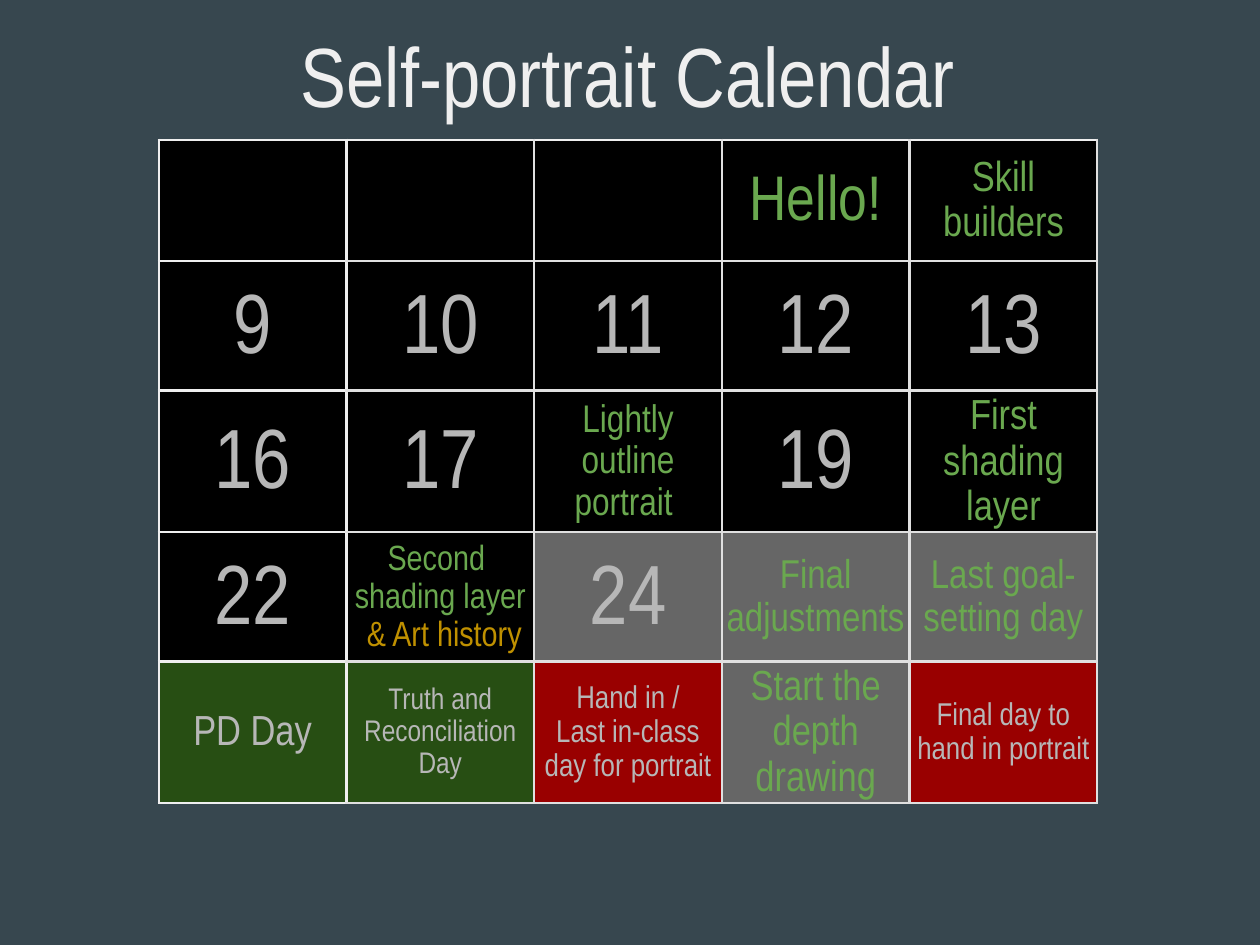
from dataclasses import dataclass

from lxml import etree
from pptx import Presentation
from pptx.dml.color import RGBColor
from pptx.enum.text import MSO_ANCHOR, PP_ALIGN
from pptx.oxml.ns import qn
from pptx.util import Inches, Pt

SLATE = RGBColor(0x37, 0x47, 0x4F)
BLACK = RGBColor(0x00, 0x00, 0x00)
GRAY = RGBColor(0x66, 0x66, 0x66)
DARK_GREEN = RGBColor(0x27, 0x4E, 0x13)
RED = RGBColor(0x99, 0x00, 0x00)
GREEN = RGBColor(0x6A, 0xA8, 0x4F)
AMBER = RGBColor(0xBF, 0x90, 0x00)
SILVER = RGBColor(0xB7, 0xB7, 0xB7)
OFF_WHITE = RGBColor(0xEF, 0xEF, 0xEF)
LINE_GRAY = RGBColor(0xE0, 0xE0, 0xE0)

FONT = "Arial Narrow"
COL_WIDTH = 1.49
ROW_HEIGHTS = [0.96, 0.96, 1.03, 1.03, 1.03, 1.03]


@dataclass
class Day:
    text: str = ""
    size: int = 48
    color: RGBColor = SILVER
    fill: RGBColor = BLACK
    extra: str = ""


WEEKS = [
    [Day(), Day(), Day(), Day("Hello!", 36, GREEN), Day("Skill builders", 24, GREEN)],
    [Day(str(n)) for n in range(9, 14)],
    [Day("16"), Day("17"), Day("Lightly outline\nportrait ", 22, GREEN), Day("19"),
     Day("First shading layer", 24, GREEN)],
    [Day("22"), Day("Second \nshading layer\n ", 20, GREEN, extra="& Art history"),
     Day("24", fill=GRAY), Day("Final adjustments", 23, GREEN, GRAY),
     Day("Last goal-setting day", 23, GREEN, GRAY)],
    [Day("PD Day", 24, fill=DARK_GREEN),
     Day("Truth and Reconciliation Day", 17, fill=DARK_GREEN),
     Day("Hand in /\vLast in-class day for portrait", 18, fill=RED),
     Day("Start the depth drawing", 24, GREEN, GRAY),
     Day("Final day to hand in portrait", 18, fill=RED)],
]


def set_borders(cell, colors):
    """Draw the cell's sides; a side without a colour gets no line."""
    tcPr = cell._tc.get_or_add_tcPr()
    for side in "LRTB":
        ln = etree.SubElement(tcPr, qn(f"a:ln{side}"), w=str(Pt(1.5)))
        if side in colors:
            fill = etree.SubElement(ln, qn("a:solidFill"))
            etree.SubElement(fill, qn("a:srgbClr"), val=str(colors[side]))
        else:
            etree.SubElement(ln, qn("a:noFill"))


def style_run(r, size, color):
    for name, value in {"name": FONT, "size": Pt(size)}.items():
        setattr(r.font, name, value)
    r.font.color.rgb = color


def write_cell(cell, day):
    layout = {"vertical_anchor": MSO_ANCHOR.MIDDLE,
              "margin_left": Inches(0.03), "margin_right": Inches(0.03),
              "margin_top": Inches(0.02), "margin_bottom": Inches(0.02)}
    for name, value in layout.items():
        setattr(cell, name, value)
    if not day.text:
        return
    tf = cell.text_frame
    tf.text = day.text
    for p in tf.paragraphs:
        p.alignment = PP_ALIGN.CENTER
        p.line_spacing = 1.15
        for r in p.runs:
            style_run(r, day.size, day.color)
    if day.extra:
        r = tf.paragraphs[-1].add_run()
        r.text = day.extra
        style_run(r, day.size, AMBER)


def day_borders(row, col):
    """The first column and the line under the title are lighter."""
    if col == 0:
        return dict.fromkeys("LRTB", OFF_WHITE)
    colors = dict.fromkeys("LRTB", LINE_GRAY)
    if col == 1:
        colors["L"] = OFF_WHITE
    if row == 1:
        colors["T"] = OFF_WHITE
    return colors


def add_calendar(slide, left, top):
    n_cols = len(WEEKS[0])
    frame = slide.shapes.add_table(
        len(ROW_HEIGHTS), n_cols, Inches(left), Inches(top),
        Inches(n_cols * COL_WIDTH), Inches(sum(ROW_HEIGHTS)))
    table = frame.table
    table.first_row = table.horz_banding = False
    for column in table.columns:
        column.width = Inches(COL_WIDTH)
    for row, height in zip(table.rows, ROW_HEIGHTS):
        row.height = Inches(height)

    title = table.cell(0, 0)
    title.merge(table.cell(0, n_cols - 1))
    for cell in table.rows[0].cells:
        set_borders(cell, {"B": OFF_WHITE})
        cell.fill.background()
    write_cell(title, Day("Self-portrait Calendar", 48, OFF_WHITE))

    for i, week in enumerate(WEEKS, start=1):
        for j, day in enumerate(week):
            cell = table.cell(i, j)
            set_borders(cell, day_borders(i, j))
            cell.fill.solid()
            cell.fill.fore_color.rgb = day.fill
            write_cell(cell, day)


def main():
    prs = Presentation()
    prs.slide_width, prs.slide_height = Inches(10), Inches(7.5)
    slide = prs.slides.add_slide(prs.slide_layouts[6])
    slide.background.fill.solid()
    slide.background.fill.fore_color.rgb = SLATE
    add_calendar(slide, 1.26, 0.15)
    prs.save("out.pptx")


if __name__ == "__main__":
    main()
